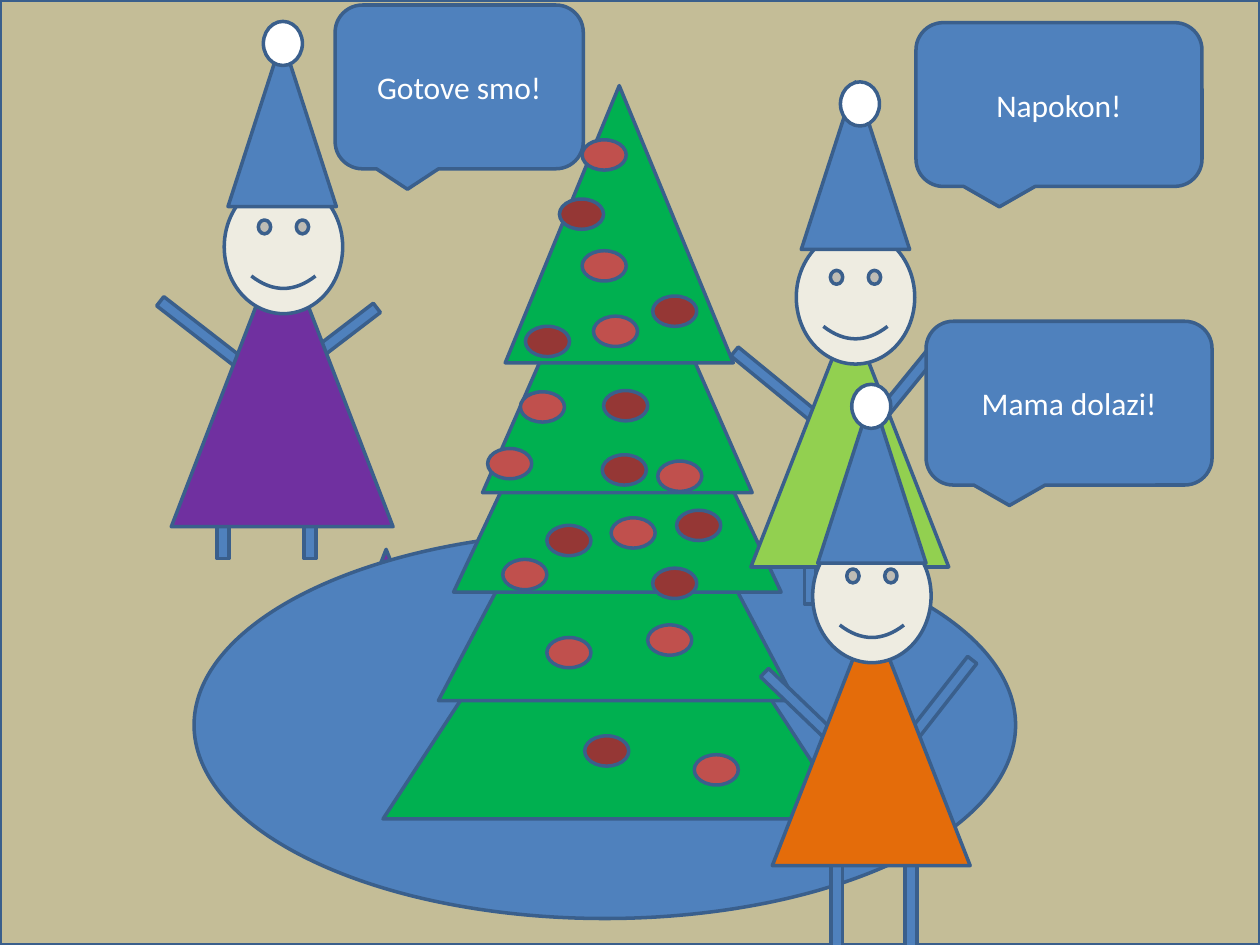
from pptx import Presentation
from pptx.dml.color import RGBColor
from pptx.enum.shapes import MSO_SHAPE as Shape
from pptx.enum.text import MSO_ANCHOR, PP_ALIGN
from pptx.util import Inches, Pt

COLORS = {
    "sand": "C4BD97", "outline": "3A5F8C", "blue": "4F81BD", "green": "00B050",
    "red": "C0504D", "dark red": "953735", "purple": "7030A0", "lime": "92D050",
    "orange": "E46C0A", "skin": "EEECE1", "white": "FFFFFF",
}

# Tiers as left, top, width, height; baubles as left, top; all from the tree's corner
TIERS = [(0, 2.99, 3.7, 2.83), (0.44, 2.2, 2.83, 2.68), (0.56, 1.26, 2.6, 2.76),
         (0.79, 0.79, 2.14, 2.44), (0.97, 0, 1.81, 2.2)]
BAUBLES = {
    "red": [(1.58, 0.43), (1.67, 1.83), (1.58, 1.31), (0.95, 3.76), (1.3, 4.38),
            (2.47, 5.31), (1.09, 2.43), (0.83, 2.88), (1.81, 3.43), (2.1, 4.28),
            (2.18, 2.98)],
    "dark red": [(2.14, 1.67), (1.75, 2.42), (1.4, 0.9), (2.14, 3.83), (1.74, 2.93),
                 (1.3, 3.49), (1.13, 1.91), (2.33, 3.37), (1.6, 5.16)],
}

# Parts are offset from the corner of the dress; limbs add a rotation
ELVES = [
    {"dress": (1.36, 1.89, 1.76, 2.29), "color": "purple",
     "limbs": [(-0.31, 1.82, 90), (0.38, 1.82, 90), (-0.39, 0.63, 217.8), (0.49, 0.68, 142.6)],
     "face": (0.42, -0.46), "hat": (0.45, -1.58), "pompom": (0.73, -1.72)},
    {"dress": (5.96, 2.49, 1.57, 2.01), "color": "lime",
     "limbs": [(0.29, 1.63, 90), (-0.25, 1.58, 90), (-0.44, 0.44, 39.3), (0.52, 0.36, 129.2)],
     "face": (0.36, -0.66), "hat": (0.4, -1.84), "pompom": (0.71, -1.84)},
    {"dress": (6.13, 4.86, 1.57, 2.01), "color": "orange",
     "limbs": [(-0.21, 1.93, 90), (0.38, 1.93, 90), (-0.4, 0.65, 43.8), (0.54, 0.6, 128)],
     "face": (0.32, -0.66), "hat": (0.36, -1.72), "pompom": (0.63, -1.81)},
]
CALLOUTS = [
    ("Gotove smo!", (2.66, 0.04, 1.97, 1.3)),
    ("Mama dolazi!", (7.35, 2.55, 2.27, 1.3)),
    ("Napokon!", (7.27, 0.18, 2.27, 1.3)),
]


def rgb(name):
    return RGBColor.from_string(COLORS[name])


def add_figure(shapes, kind, box, color, rotation=0):
    shape = shapes.add_shape(kind, *map(Inches, box))
    shape.shadow.inherit = False
    shape.fill.solid()
    shape.fill.fore_color.rgb = rgb(color)
    shape.line.color.rgb = rgb("outline")
    shape.line.width = Pt(2)
    shape.rotation = rotation
    return shape


def add_tree(slide, left, top):
    shapes = slide.shapes.add_group_shape().shapes
    for x, y, width, height in TIERS:
        add_figure(shapes, Shape.ISOSCELES_TRIANGLE, (left + x, top + y, width, height), "green")
    for color, places in BAUBLES.items():
        for x, y in places:
            add_figure(shapes, Shape.OVAL, (left + x, top + y, 0.35, 0.24), color)


def add_elf(slide, dress, color, limbs, face, hat, pompom):
    shapes = slide.shapes.add_group_shape().shapes
    left, top = dress[:2]

    def add_part(kind, offset, size, fill, rotation=0):
        box = (left + offset[0], top + offset[1], *size)
        add_figure(shapes, kind, box, fill, rotation)

    for x, y, rotation in limbs:
        add_part(Shape.MATH_MINUS, (x, y), (1.44, 0.39), "blue", rotation)
    add_part(Shape.ISOSCELES_TRIANGLE, (0, 0), dress[2:], color)
    add_part(Shape.SMILEY_FACE, face, (0.94, 1.06), "skin")
    add_part(Shape.ISOSCELES_TRIANGLE, hat, (0.86, 1.33), "blue")
    add_part(Shape.OVAL, pompom, (0.31, 0.35), "white")


def add_callout(slide, text, box):
    shape = add_figure(slide.shapes, Shape.ROUNDED_RECTANGULAR_CALLOUT, box, "blue")
    frame = shape.text_frame
    frame.word_wrap = True
    frame.vertical_anchor = MSO_ANCHOR.MIDDLE
    paragraph = frame.paragraphs[0]
    paragraph.alignment = PP_ALIGN.CENTER
    run = paragraph.add_run()
    run.text = text
    run.font.name = "Calibri"
    run.font.size = Pt(18)
    run.font.color.rgb = rgb("white")


def add_backdrop(slide):
    """Sand wall, the purple tip behind the rug, and the rug."""
    add_figure(slide.shapes, Shape.RECTANGLE, (0, 0, 10, 7.5), "sand")
    add_figure(slide.shapes, Shape.ISOSCELES_TRIANGLE, (2.28, 4.36, 1.57, 2.01), "purple")
    add_figure(slide.shapes, Shape.OVAL, (1.54, 4.22, 6.52, 3.07), "blue")


def main():
    presentation = Presentation()
    presentation.slide_width = Inches(10)
    presentation.slide_height = Inches(7.5)
    slide = presentation.slides.add_slide(presentation.slide_layouts[6])
    add_backdrop(slide)
    add_tree(slide, 3.04, 0.68)
    for elf in ELVES:
        add_elf(slide, **elf)
    for text, box in CALLOUTS:
        add_callout(slide, text, box)
    presentation.save("out.pptx")


if __name__ == "__main__":
    main()
